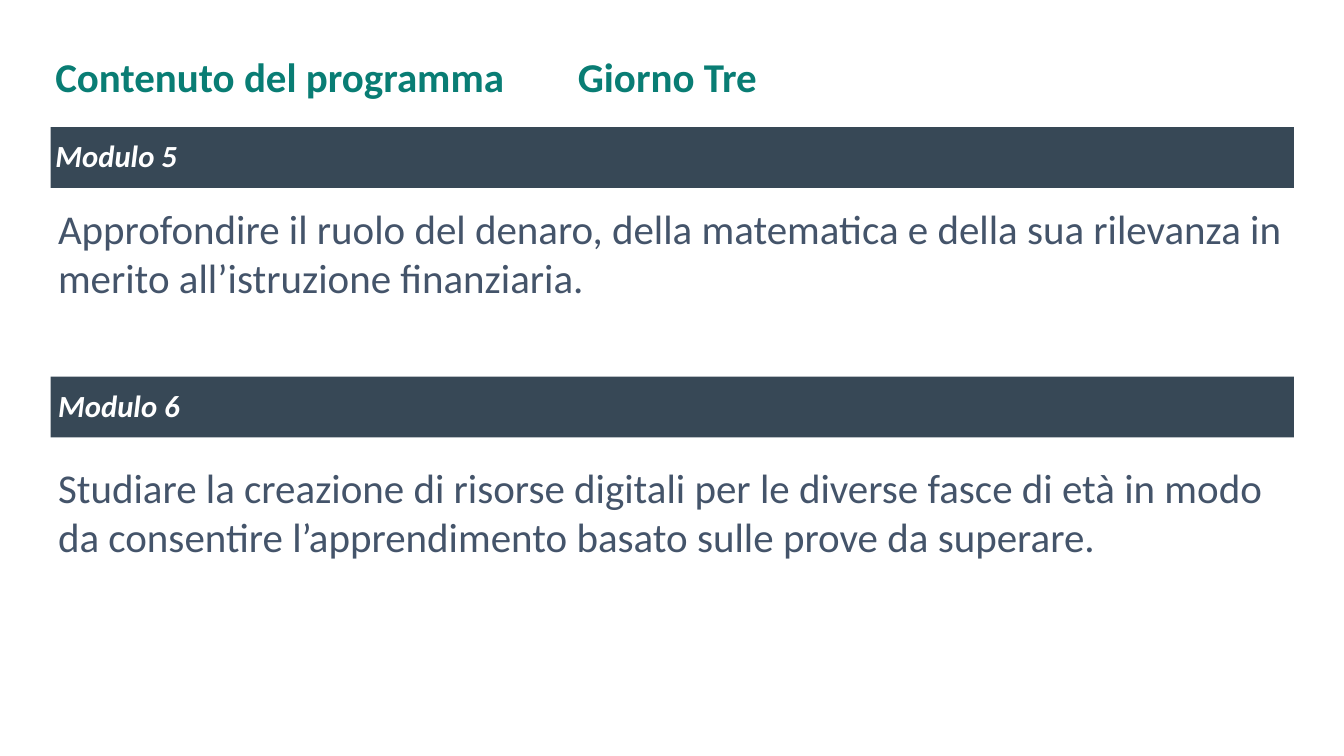
from pptx import Presentation
from pptx.dml.color import RGBColor
from pptx.enum import shapes, text
from pptx.oxml import ns
from pptx.util import Inches, Pt
from lxml import etree

TEAL = RGBColor(0x09, 0x7D, 0x74)
SLATE = RGBColor(0x37, 0x48, 0x56)
BLUE_GREY = RGBColor(0x44, 0x54, 0x6A)
WHITE = RGBColor(0xFF, 0xFF, 0xFF)
FONT = "Calibri"
INSET = 0.05

# Each module: heading, bar top, heading inset, description, description top and height
MODULES = [
    ("Modulo 5", 1.38, 0.05,
     "Approfondire il ruolo del denaro, della matematica e della sua rilevanza "
     "in merito all’istruzione finanziaria.", 2.16, 1.71),
    ("Modulo 6", 4.09, 0.08,
     "Studiare la creazione di risorse digitali per le diverse fasce di età in modo "
     "da consentire l’apprendimento basato sulle prove da superare.", 4.97, 1.18),
]


def write(shape, wording, *, size=32, color=BLUE_GREY, bold=False, italic=False,
          align=text.PP_ALIGN.LEFT, anchor=text.MSO_ANCHOR.TOP, spacing=1.0,
          left_inset=INSET, tab=None):
    frame = shape.text_frame
    frame.word_wrap = True
    frame.auto_size = text.MSO_AUTO_SIZE.NONE
    frame.vertical_anchor = anchor
    frame.margin_left = Inches(left_inset)
    frame.margin_right = frame.margin_top = frame.margin_bottom = Inches(INSET)
    paragraph = frame.paragraphs[0]
    if tab is not None:
        stops = etree.SubElement(paragraph._p.get_or_add_pPr(), ns.qn("a:tabLst"))
        etree.SubElement(stops, ns.qn("a:tab"), pos=str(Inches(tab)), algn="l")
    paragraph.alignment = align
    paragraph.line_spacing = spacing
    run = paragraph.add_run()
    run.text = wording
    run.font.name = FONT
    run.font.size = Pt(size)
    run.font.bold = bold
    run.font.italic = italic
    run.font.color.rgb = color


def add_title(slide, wording):
    title = slide.shapes.title
    title.left, title.top = Inches(0.55), Inches(0.47)
    title.width, title.height = Inches(13.48), Inches(0.79)
    write(title, wording, color=TEAL, bold=True, spacing=0.9,
          anchor=text.MSO_ANCHOR.MIDDLE, tab=5.67)


def add_heading_bar(slide, heading, top, left_inset):
    bar = slide.shapes.add_shape(shapes.MSO_SHAPE.RECTANGLE, Inches(0.55),
                                 Inches(top), Inches(13.49), Inches(0.66))
    bar.shadow.inherit = False
    bar.fill.solid()
    bar.fill.fore_color.rgb = SLATE
    bar.line.fill.background()
    write(bar, heading, size=24, color=WHITE, bold=True, italic=True, spacing=0.9,
          align=text.PP_ALIGN.JUSTIFY, anchor=text.MSO_ANCHOR.MIDDLE,
          left_inset=left_inset)


def add_description(slide, wording, top, height):
    description = slide.shapes.add_textbox(Inches(0.58), Inches(top),
                                           Inches(13.43), Inches(height))
    write(description, wording)


def main():
    # Slide of 1050 by 591 points
    deck = Presentation()
    deck.slide_width = Inches(1050 / 72)
    deck.slide_height = Inches(591 / 72)
    slide = deck.slides.add_slide(deck.slide_layouts.get_by_name("Title Only"))

    # Title, with the day set at a tab stop
    add_title(slide, "Contenuto del programma\tGiorno Tre")

    # Modules of the day
    for heading, bar_top, left_inset, wording, top, height in MODULES:
        add_heading_bar(slide, heading, bar_top, left_inset)
        add_description(slide, wording, top, height)

    deck.save("out.pptx")


if __name__ == "__main__":
    main()
